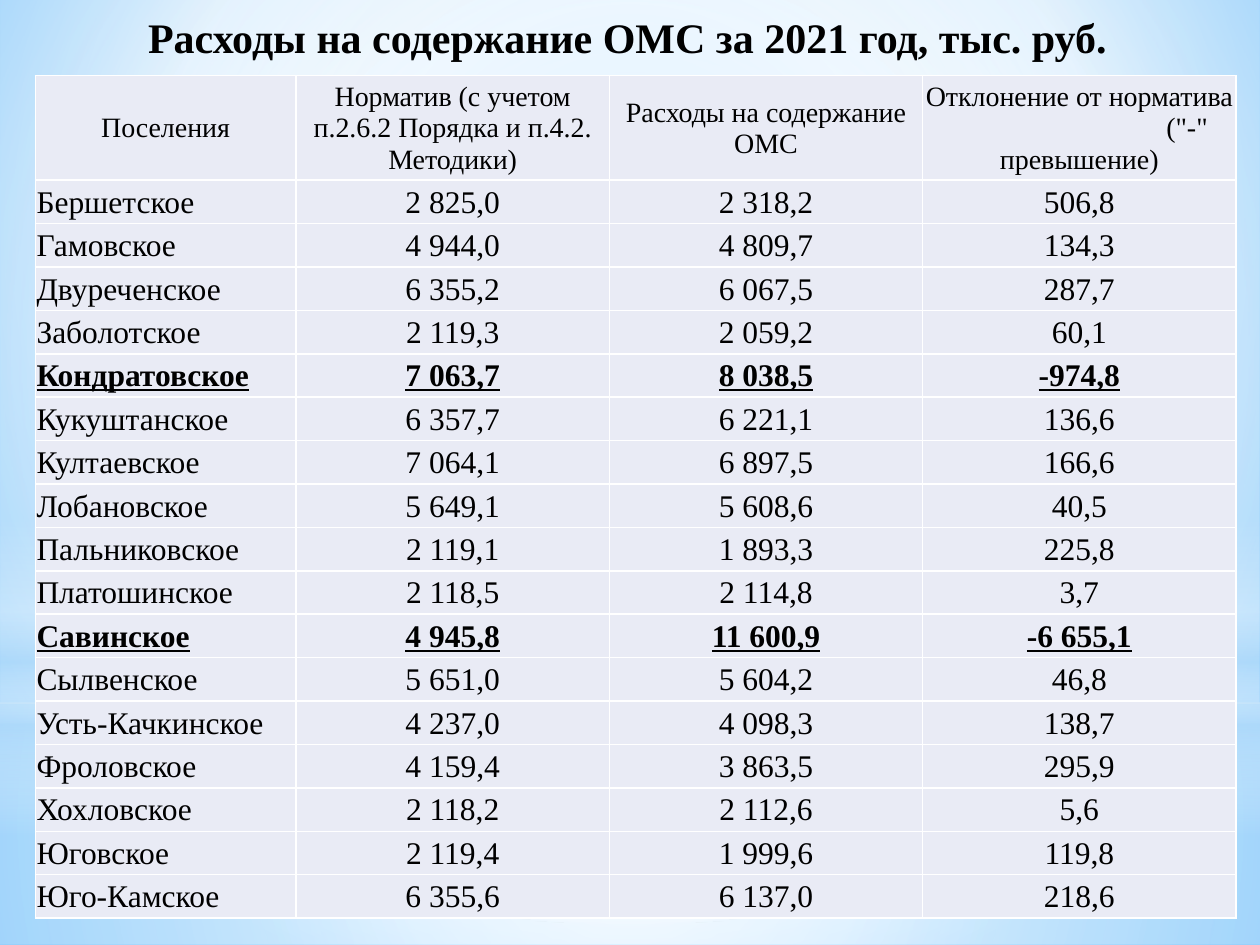
import pptx
import pptx.util
import pptx.dml.color
import pptx.enum.shapes
import pptx.enum.text
import pptx.oxml.ns
from lxml import etree

Inches, Pt = pptx.util.Inches, pptx.util.Pt
RGBColor = pptx.dml.color.RGBColor
MSO_SHAPE = pptx.enum.shapes.MSO_SHAPE
PP_ALIGN, MSO_ANCHOR = pptx.enum.text.PP_ALIGN, pptx.enum.text.MSO_ANCHOR
qn = pptx.oxml.ns.qn

BLACK = RGBColor(0x00, 0x00, 0x00)
WHITE = RGBColor(0xFF, 0xFF, 0xFF)
CELL = RGBColor(0xE9, 0xEB, 0xF5)
HAZE = RGBColor(0xB4, 0xDC, 0xFA)
SKY = RGBColor(0x9E, 0xD5, 0xFF)
DEEP_SKY = RGBColor(0x5B, 0xB9, 0xFF)
FONT = "Times New Roman"


def set_gradient(fill, element, stops, centre=None):
    """Stops are (position %, colour, opacity %); no centre means top to bottom."""
    fill.gradient()
    gradient = element.find(".//" + qn("a:gradFill"))
    for child in list(gradient):
        gradient.remove(child)
    stop_list = etree.SubElement(gradient, qn("a:gsLst"))
    for position, colour, opacity in stops:
        stop = etree.SubElement(stop_list, qn("a:gs"), pos=str(position * 1000))
        tint = etree.SubElement(stop, qn("a:srgbClr"), val=str(colour))
        if opacity < 100:
            etree.SubElement(tint, qn("a:alpha"), val=str(opacity * 1000))
    if centre:
        path = etree.SubElement(gradient, qn("a:path"), path="circle")
        etree.SubElement(path, qn("a:fillToRect"),
                         {side: str(share * 1000) for side, share in zip("ltrb", centre)})
    else:
        etree.SubElement(gradient, qn("a:lin"), ang="5400000", scaled="0")


def set_borders(cell, colour, width):
    properties = cell._tc.get_or_add_tcPr()
    for position, side in enumerate(("a:lnL", "a:lnR", "a:lnT", "a:lnB")):
        border = etree.Element(qn(side), w=str(width))
        solid = etree.SubElement(border, qn("a:solidFill"))
        etree.SubElement(solid, qn("a:srgbClr"), val=str(colour))
        properties.insert(position, border)


prs = pptx.Presentation()
prs.slide_width, prs.slide_height = Inches(10), Inches(7.5)
W, H = prs.slide_width, prs.slide_height
layout = prs.slide_layouts[5]
slide = prs.slides.add_slide(layout)

# Sky background
set_gradient(slide.background.fill, slide.element,
             [(0, SKY, 100), (60, WHITE, 100), (100, DEEP_SKY, 100)], (20, 10, 20, 60))

# Haze over the sky, kept on the layout: shape, top and height in slide heights, stops, centre
MIDDLE = (50, 50, 50, 50)
haze_layers = [
    (MSO_SHAPE.RECTANGLE, 0.744, 0.256,
     [(0, WHITE, 91), (37, WHITE, 76), (100, HAZE, 79)], MIDDLE),
    (MSO_SHAPE.RECTANGLE, 0, 0.744,
     [(0, WHITE, 89), (48, WHITE, 62), (100, HAZE, 79)], MIDDLE),
    (MSO_SHAPE.RECTANGLE, 0.55, 0.333,
     [(0, WHITE, 0), (29, WHITE, 30), (45, HAZE, 40),
      (55, WHITE, 26), (65, HAZE, 60), (100, WHITE, 0)], None),
    (MSO_SHAPE.OVAL, 0.233, 0.744, [(0, WHITE, 100), (56, WHITE, 0)], MIDDLE),
]
for outline, top, height, stops, centre in haze_layers:
    haze = slide.shapes.add_shape(outline, 0, int(H * top), W, int(H * height))
    set_gradient(haze.fill, haze.element, stops, centre)
    haze.line.fill.background()
    haze.shadow.inherit = False
    layout.shapes.element.append(haze.element)

# Title
title = slide.shapes.title
title.left, title.top = int(W * 0.028), int(H * 0.003)
title.width, title.height = int(W * 0.94), int(H * 0.072)
title.text_frame.text = "Расходы на содержание ОМС за 2021 год, тыс. руб."
title.text_frame.vertical_anchor = MSO_ANCHOR.MIDDLE
heading = title.text_frame.paragraphs[0]
heading.alignment = PP_ALIGN.CENTER
heading.font.name, heading.font.size, heading.font.bold = FONT, Pt(24), True
heading.font.color.rgb = BLACK

# Spending by settlement: norm, actual, deviation
headers = ("Поселения", "Норматив (с учетом п.2.6.2 Порядка и п.4.2. Методики)",
           "Расходы на содержание ОМС", "Отклонение от норматива\n(\"-\"\nпревышение)")
settlements = [
    ("Бершетское", "2 825,0", "2 318,2", "506,8"),
    ("Гамовское", "4 944,0", "4 809,7", "134,3"),
    ("Двуреченское", "6 355,2", "6 067,5", "287,7"),
    ("Заболотское", "2 119,3", "2 059,2", "60,1"),
    ("Кондратовское", "7 063,7", "8 038,5", "-974,8"),
    ("Кукуштанское", "6 357,7", "6 221,1", "136,6"),
    ("Култаевское", "7 064,1", "6 897,5", "166,6"),
    ("Лобановское", "5 649,1", "5 608,6", "40,5"),
    ("Пальниковское", "2 119,1", "1 893,3", "225,8"),
    ("Платошинское", "2 118,5", "2 114,8", "3,7"),
    ("Савинское", "4 945,8", "11 600,9", "-6 655,1"),
    ("Сылвенское", "5 651,0", "5 604,2", "46,8"),
    ("Усть-Качкинское", "4 237,0", "4 098,3", "138,7"),
    ("Фроловское", "4 159,4", "3 863,5", "295,9"),
    ("Хохловское", "2 118,2", "2 112,6", "5,6"),
    ("Юговское", "2 119,4", "1 999,6", "119,8"),
    ("Юго-Камское", "6 355,6", "6 137,0", "218,6"),
]
rows = [headers] + settlements
TABLE_W, TABLE_H = Inches(9.53), Inches(6.69)
NAME_W, HEADER_H = Inches(2.07), Inches(0.83)
spending = slide.shapes.add_table(len(rows), len(headers), Inches(0.28), Inches(0.6),
                                  TABLE_W, TABLE_H).table
spending.first_row = spending.horz_banding = False
for index, column in enumerate(spending.columns):
    column.width = NAME_W if index == 0 else (TABLE_W - NAME_W) // (len(headers) - 1)
for index, row in enumerate(spending.rows):
    row.height = HEADER_H if index == 0 else (TABLE_H - HEADER_H) // len(settlements)

for r, values in enumerate(rows):
    over_norm = values[-1].startswith("-")
    for c, value in enumerate(values):
        cell = spending.cell(r, c)
        cell.text = value
        cell.vertical_anchor = MSO_ANCHOR.MIDDLE
        cell.margin_left = cell.margin_right = cell.margin_top = Inches(0.01)
        cell.margin_bottom = 0
        cell.fill.solid()
        cell.fill.fore_color.rgb = CELL
        set_borders(cell, WHITE, Pt(1))
        for paragraph in cell.text_frame.paragraphs:
            paragraph.alignment = PP_ALIGN.LEFT if r and c == 0 else PP_ALIGN.CENTER
            paragraph.font.name = FONT
            paragraph.font.size = Pt(18 if r else 16)
            paragraph.font.color.rgb = BLACK
            paragraph.font.bold = paragraph.font.underline = over_norm

# The minus sign in the last header stands right of the centre
minus_note = spending.cell(0, 3).text_frame.paragraphs[1]
minus_note._p.get_or_add_pPr().set("marL", str(Inches(1.71)))

prs.save("out.pptx")
